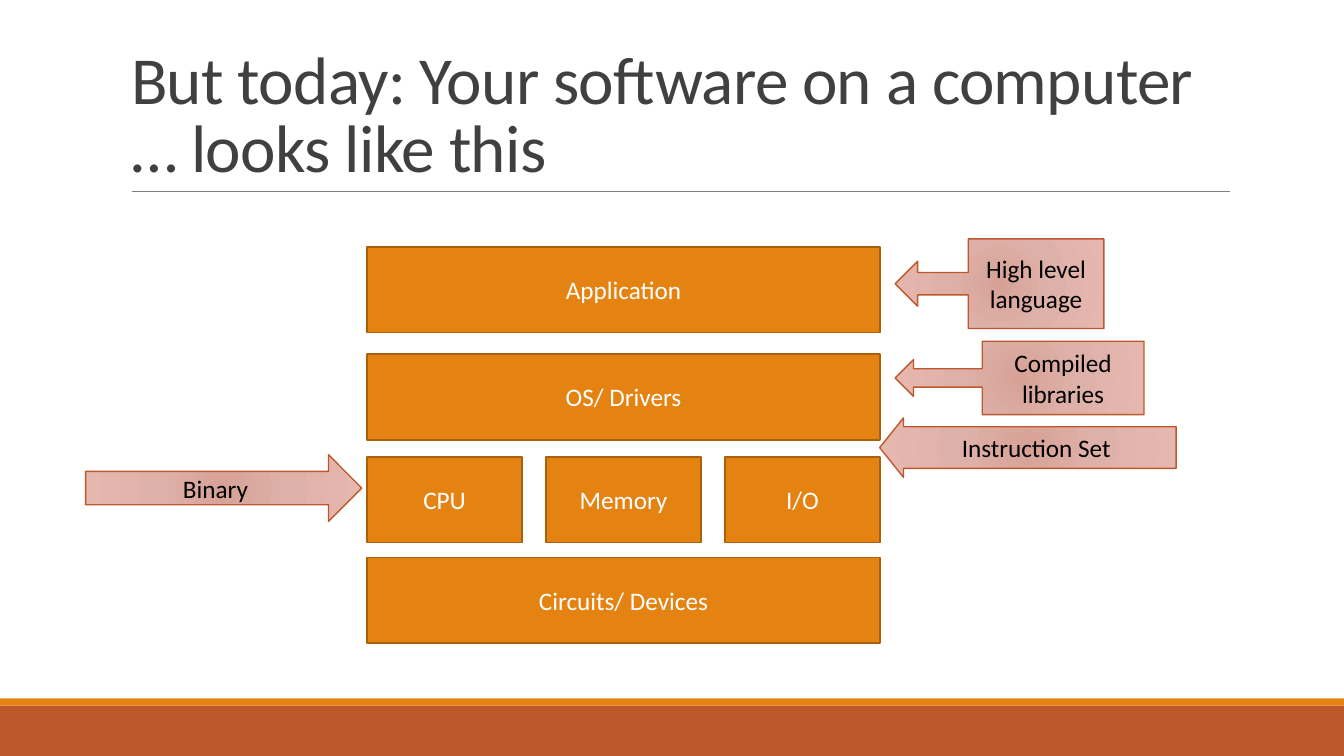
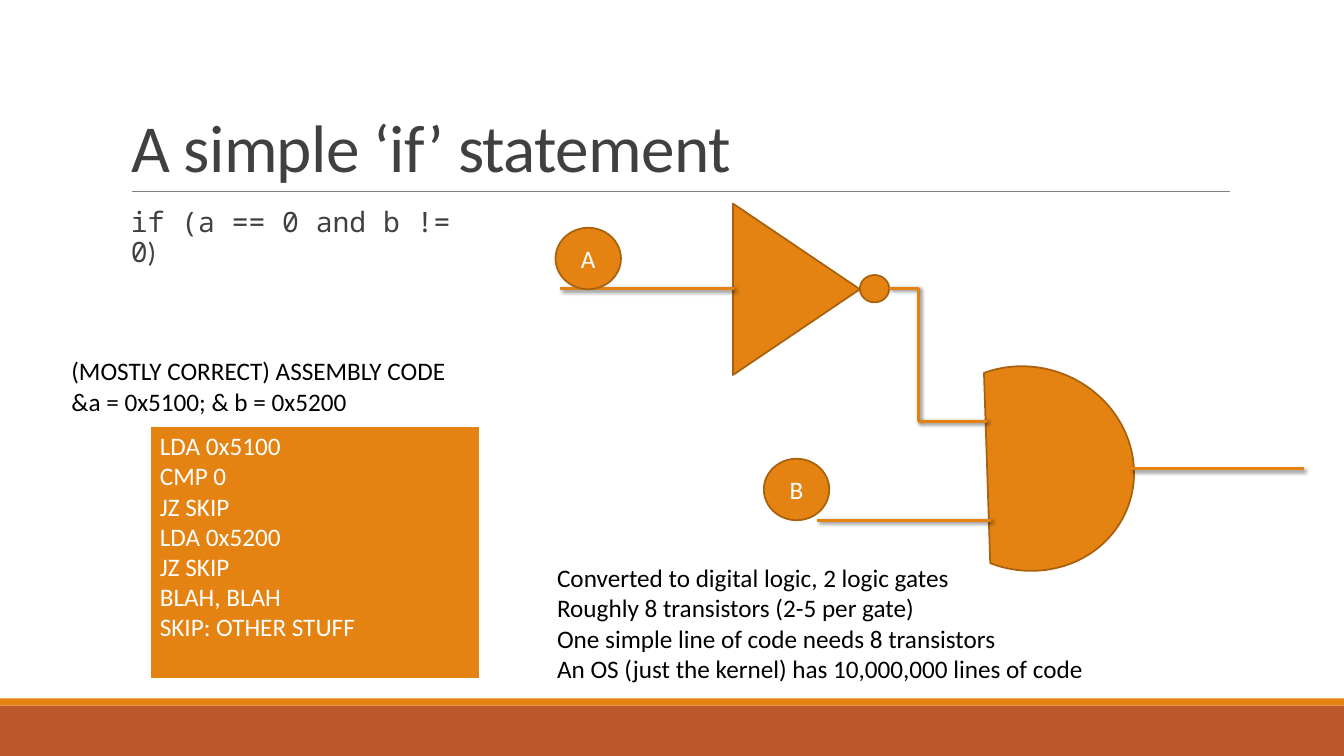
from lxml import etree
from pptx import Presentation
from pptx.dml.color import RGBColor
from pptx.enum.shapes import MSO_CONNECTOR as Link, MSO_SHAPE as Kind
from pptx.enum.text import MSO_ANCHOR as Anchor, MSO_AUTO_SIZE as Fit, PP_ALIGN as Align
from pptx.oxml import parse_xml
from pptx.oxml.ns import nsdecls, qn
from pptx.util import Cm, Pt

COLORS = {
    "orange": "E48312", "rust": "BD582C", "edge": "A9610D", "rule": "808080",
    "title": "404040", "white": "FFFFFF", "black": "000000",
}
FONT, CODE_FONT = "Calibri", "Noto Sans Mono"
BLOCK = {"fill": "orange", "line": "edge", "weight": 1.25, "text": "white"}
LABEL = {"fill": None, "line": "rust", "weight": 1, "text": "black"}
LISTING = {"fill": "orange", "line": "white", "weight": 2, "text": "white",
           "align": Align.LEFT, "anchor": Anchor.TOP}
BAND = {"line": None, "text": "white"}

LABEL_GRADIENT = f"""<a:gradFill {nsdecls('a')} rotWithShape="1"><a:gsLst>
<a:gs pos="0"><a:srgbClr val="D7A197"/></a:gs>
<a:gs pos="45000"><a:srgbClr val="DEB1A8"/></a:gs>
<a:gs pos="100000"><a:srgbClr val="E6B7AE"/></a:gs></a:gsLst>
<a:path path="circle"><a:fillToRect l="100000" t="100000" r="100000" b="100000"/></a:path>
</a:gradFill>"""
WIRE_SHADOW = f"""<a:effectLst {nsdecls('a')}>
<a:outerShdw blurRad="38100" dist="25400" dir="2700000" rotWithShape="0">
<a:srgbClr val="000000"><a:alpha val="60000"/></a:srgbClr></a:outerShdw></a:effectLst>"""


def write(frame, lines, color, size=18, align=Align.LEFT):
    """Fill a text frame with one paragraph per line."""
    frame.word_wrap = True
    for number, line in enumerate(lines):
        paragraph = frame.add_paragraph() if number else frame.paragraphs[0]
        paragraph.alignment = align
        run = paragraph.add_run()
        run.text = line
        run.font.name, run.font.size = FONT, Pt(size)
        run.font.color.rgb = RGBColor.from_string(COLORS[color])


def add_figure(shapes, kind, place, look, lines=()):
    """Add a preset shape; place is left, top, width, height in cm."""
    figure = shapes.add_shape(kind, *map(Cm, place))
    figure.shadow.inherit = False
    if look["line"]:
        figure.line.color.rgb = RGBColor.from_string(COLORS[look["line"]])
        figure.line.width = Pt(look["weight"])
    else:
        figure.line.fill.background()
    if look["fill"]:
        figure.fill.solid()
        figure.fill.fore_color.rgb = RGBColor.from_string(COLORS[look["fill"]])
    else:
        outline = figure.element.find(".//" + qn("a:prstGeom"))
        outline.addnext(parse_xml(LABEL_GRADIENT))
    figure.text_frame.vertical_anchor = look.get("anchor", Anchor.MIDDLE)
    write(figure.text_frame, lines, look["text"], align=look.get("align", Align.CENTER))
    return figure


deck = Presentation()
deck.slide_width, deck.slide_height = Cm(33.87), Cm(19.05)
layout = deck.slide_layouts[5]

# Shared title place, bands and rule live on the layout
for holder in list(layout.placeholders):
    if holder.placeholder_format.idx:
        holder.element.getparent().remove(holder.element)
    else:
        holder.left, holder.top, holder.width, holder.height = map(Cm, (3.05, 0.8, 27.94, 4.03))
        holder.text_frame.vertical_anchor = Anchor.BOTTOM
        holder.text_frame.auto_size = Fit.NONE

titles = ["But today: Your software on a computer … looks like this", "A simple ‘if’ statement"]
slides = []
for heading in titles:
    slide = deck.slides.add_slide(layout)
    title = slide.shapes.title
    write(title.text_frame, [heading], "title", 48)
    title.text_frame.paragraphs[0].line_spacing = 0.85
    title.element.find(".//" + qn("a:rPr")).set("spc", "-50")
    slides.append(slide)
stack, logic = (slide.shapes for slide in slides)

rule = stack.add_connector(Link.STRAIGHT, Cm(3.33), Cm(4.83), Cm(31), Cm(4.83))
rule.line.color.rgb = RGBColor.from_string(COLORS["rule"])
rule.line.width = Pt(0.5)
etree.SubElement(rule.element.spPr, qn("a:effectLst"))
footer = add_figure(stack, Kind.RECTANGLE, (0, 17.78, 33.87, 1.27), {**BAND, "fill": "rust"})
stripe = add_figure(stack, Kind.RECTANGLE, (0, 17.6, 33.87, 0.18), {**BAND, "fill": "orange"})
for shared in (footer, stripe, rule):
    layout.shapes.element.append(shared.element)

# Slide 1: layers of a computer
LEFT, WIDTH, HEIGHT, GAP = 9.25, 12.93, 2.16, 0.6
layers = [
    (6.22, ["Application"]),
    (8.92, ["OS/ Drivers"]),
    (11.51, ["CPU", "Memory", "I/O"]),
    (14.05, ["Circuits/ Devices"]),
]
for top, parts in layers:
    part_width = (WIDTH - GAP * (len(parts) - 1)) / len(parts)
    for column, part in enumerate(parts):
        left = LEFT + column * (part_width + GAP)
        add_figure(stack, Kind.RECTANGLE, (left, top, part_width, HEIGHT), BLOCK, [part])

# Each label ends with its own proportions, where the preset ones are too tight
interfaces = [
    (Kind.LEFT_ARROW, (22.17, 10.53, 7.47, 1.5), "Instruction Set", (0.7, 0.4)),
    (Kind.RIGHT_ARROW, (2.16, 11.46, 6.96, 1.68), "Binary", ()),
    (Kind.LEFT_ARROW_CALLOUT, (22.56, 6.02, 5.26, 2.26), "High level language", ()),
    (Kind.LEFT_ARROW_CALLOUT, (22.56, 8.6, 6.27, 1.85), "Compiled libraries", ()),
]
for kind, place, caption, proportions in interfaces:
    label = add_figure(stack, kind, place, LABEL, [caption])
    label.text_frame.margin_top = label.text_frame.margin_bottom = 0
    for index, proportion in enumerate(proportions):
        label.adjustments[index] = proportion

# Slide 2: statement, logic gates and assembly code
statement = logic.add_textbox(Cm(3.05), Cm(5.13), Cm(9.25), Cm(1.55)).text_frame
write(statement, ["if (a == 0 and b != 0"], "title", 20)
statement.margin_left, statement.margin_right = Cm(0.25), 0
condition = statement.paragraphs[0]
condition.line_spacing = 0.9
condition.runs[0].font.name = CODE_FONT
bracket = condition.add_run()
bracket.text = ")"
bracket.font.name, bracket.font.size = FONT, Pt(20)
bracket.font.color.rgb = RGBColor.from_string(COLORS["title"])

inverter = logic.add_group_shape().shapes
add_figure(inverter, Kind.ISOSCELES_TRIANGLE, (17.91, 5.69, 4.32, 3.2), BLOCK).rotation = 90
add_figure(inverter, Kind.OVAL, (21.67, 6.93, 0.74, 0.69), BLOCK)
add_figure(logic, Kind.CHORD, (23.14, 9.25, 5.46, 5.11), BLOCK).rotation = 201

wires = [
    (Link.STRAIGHT, (28.5, 11.81, 32.87, 11.81)),
    (Link.STRAIGHT, (14.12, 7.27, 18.49, 7.27)),
    (Link.STRAIGHT, (20.6, 13.11, 24.97, 13.11)),
    (Link.ELBOW, (22.4, 7.27, 23.14, 10.62)),
    (Link.STRAIGHT, (23.14, 10.62, 24.87, 10.62)),
]
for kind, ends in wires:
    wire = logic.add_connector(kind, *map(Cm, ends))
    wire.line.color.rgb = RGBColor.from_string(COLORS["orange"])
    wire.line.width = Pt(2)
    wire.element.spPr.append(parse_xml(WIRE_SHADOW))
    if kind == Link.ELBOW:
        wire.element.find(".//" + qn("a:prstGeom")).set("prst", "bentConnector2")

assembly = ["LDA 0x5100", "CMP 0", "JZ SKIP", "LDA 0x5200", "JZ SKIP", "BLAH, BLAH",
            "SKIP: OTHER STUFF"]
add_figure(logic, Kind.RECTANGLE, (3.78, 10.72, 8.33, 6.4), LISTING, assembly)
for signal, left, top in (("A", 14, 5.74), ("B", 19.25, 11.56)):
    add_figure(logic, Kind.OVAL, (left, top, 1.65, 1.55), BLOCK, [signal])

remarks = [
    ((1.55, 8.84, 13.28, 1.8),
     ["(MOSTLY CORRECT) ASSEMBLY CODE", "&a = 0x5100; & b = 0x5200"]),
    ((13.79, 14.05, 17.75, 3.33),
     ["Converted to digital logic, 2 logic gates",
      "Roughly 8 transistors (2-5 per gate)",
      "One simple line of code needs 8 transistors",
      "An OS (just the kernel) has 10,000,000 lines of code"]),
]
for place, lines in remarks:
    write(logic.add_textbox(*map(Cm, place)).text_frame, lines, "black")

deck.save("out.pptx")
